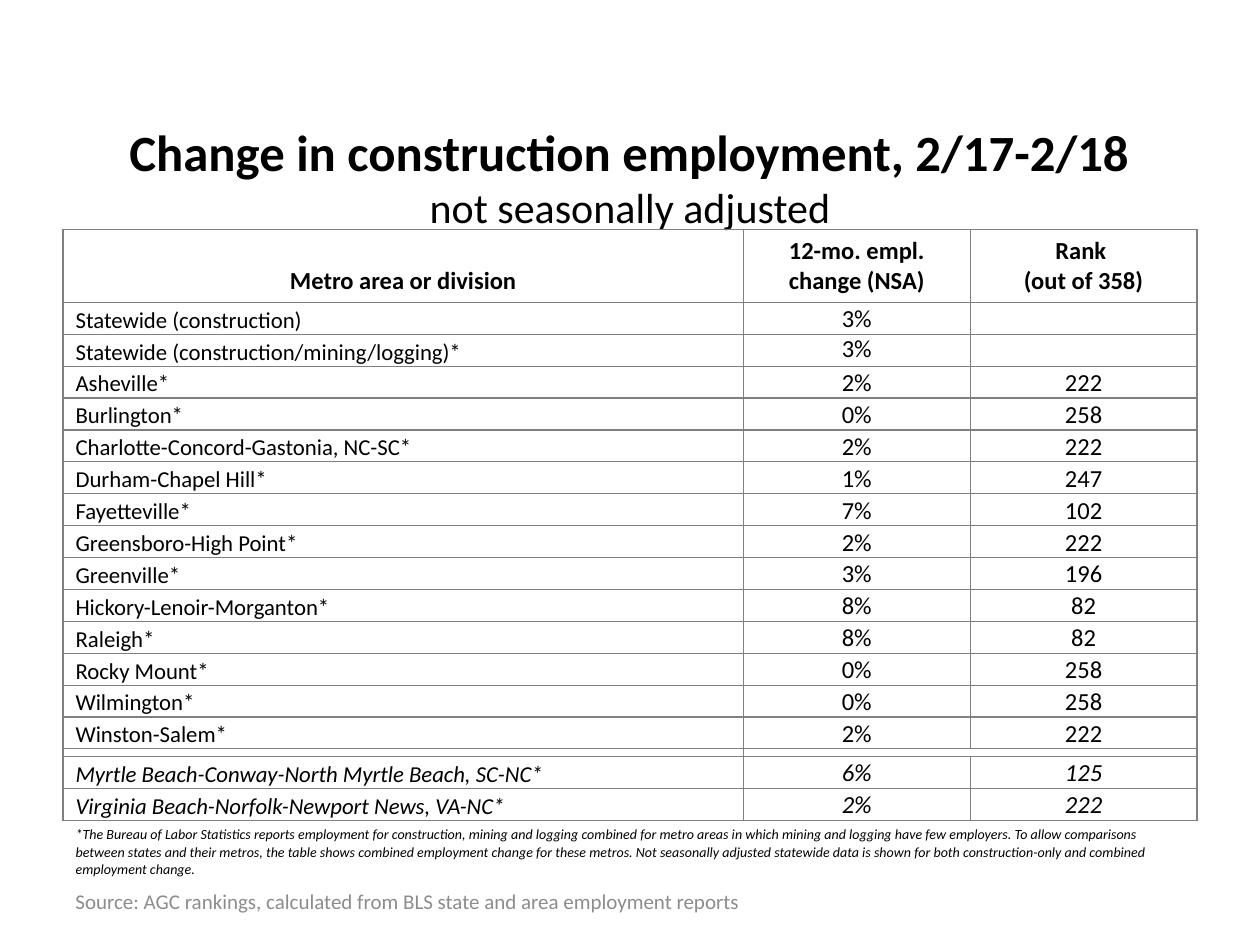
from pptx import Presentation
from pptx.dml.color import RGBColor
from pptx.enum.text import MSO_ANCHOR, MSO_AUTO_SIZE, PP_ALIGN
from pptx.oxml.ns import qn
from pptx.util import Inches, Pt
from lxml.etree import SubElement

INK = {"text": "000000", "source": "8C8C8C", "rule": "808080"}
TOP, MID, LOW = MSO_ANCHOR.TOP, MSO_ANCHOR.MIDDLE, MSO_ANCHOR.BOTTOM
HEADS = ["Metro area or division", "12-mo. empl. change (NSA)", "Rank \v(out of 358)"]
AREAS = [
    ("Statewide (construction)", "3%", ""),
    ("Statewide (construction/mining/logging)*", "3%", ""),
    ("Asheville*", "2%", "222"),
    ("Burlington*", "0%", "258"),
    ("Charlotte-Concord-Gastonia, NC-SC*", "2%", "222"),
    ("Durham-Chapel Hill*", "1%", "247"),
    ("Fayetteville*", "7%", "102"),
    ("Greensboro-High Point*", "2%", "222"),
    ("Greenville*", "3%", "196"),
    ("Hickory-Lenoir-Morganton*", "8%", "82"),
    ("Raleigh*", "8%", "82"),
    ("Rocky Mount*", "0%", "258"),
    ("Wilmington*", "0%", "258"),
    ("Winston-Salem*", "2%", "222"),
]
NEAR = [
    ("Myrtle Beach-Conway-North Myrtle Beach, SC-NC*", "6%", "125"),
    ("Virginia Beach-Norfolk-Newport News, VA-NC*", "2%", "222"),
]
NOTE = (
    "*The Bureau of Labor Statistics reports employment for construction, mining and "
    "logging combined for metro areas in which mining and logging have few employers. "
    "To allow comparisons between states and their metros, the table shows combined "
    "employment change for these metros. Not seasonally adjusted statewide data is shown "
    "for both construction-only and combined employment change."
)


class Deck:
    """Holds the style and the current slide, and places elements by shares of its size."""

    def __init__(self, wide, high):
        self.show = Presentation()
        self.show.slide_width, self.show.slide_height = Inches(wide), Inches(high)
        self.wide, self.high = self.show.slide_width, self.show.slide_height
        self.slide = self.show.slides.add_slide(self.show.slide_layouts[5])

    def box(self, x, y, w, h):
        return [int(x * self.wide), int(y * self.high), int(w * self.wide), int(h * self.high)]

    def put(self, item, form):
        for key, val in form.items():
            setattr(item, key, val)

    def style(self, run, size, ink="text", **form):
        self.put(run.font, {"name": "Calibri", "size": Pt(size), **form})
        run.font.color.rgb = RGBColor.from_string(INK[ink])

    def title(self, area, lines):
        shape = self.slide.shapes.title
        self.put(shape, dict(zip(("left", "top", "width", "height"), self.box(*area))))
        frame = shape.text_frame
        self.put(frame, {"word_wrap": True, "auto_size": MSO_AUTO_SIZE.NONE,
                         "vertical_anchor": TOP})
        para = frame.paragraphs[0]
        para.alignment = PP_ALIGN.CENTER
        for num, (text, size, bold) in enumerate(lines):
            if num:
                para.add_line_break()
            run = para.add_run()
            run.text = text
            self.style(run, size, bold=bold)

    def label(self, area, text, size, ink):
        frame = self.slide.shapes.add_textbox(*self.box(*area)).text_frame
        self.put(frame, {"word_wrap": True, "vertical_anchor": MID})
        run = frame.paragraphs[0].add_run()
        run.text = text
        self.style(run, size, ink)

    def table(self, area, cols, rows):
        grid = self.slide.shapes.add_table(len(rows), len(cols), *self.box(*area)).table
        self.put(grid, {"first_row": False, "horz_banding": False})
        for col, part in zip(grid.columns, cols):
            col.width = int(part * self.wide)
        for row, part in zip(grid.rows, rows):
            row.height = int(part * self.high)
        return grid

    def edge(self, cell, sides="LRTB"):
        props = cell._tc.get_or_add_tcPr()
        for side in "LRTB":
            line = SubElement(props, qn("a:ln" + side), w=str(Pt(0.75)))
            if side in sides:
                fill = SubElement(line, qn("a:solidFill"))
                SubElement(fill, qn("a:srgbClr"), val=INK["rule"])
            else:
                SubElement(line, qn("a:noFill"))
        cell.fill.background()

    def cell(self, cell, text, size, align, anchor, inset=None, space=None, **form):
        cell.vertical_anchor = anchor
        if inset is not None:
            self.put(cell, {"margin_left": Inches(inset), "margin_right": 0,
                            "margin_top": 0, "margin_bottom": 0})
        para = cell.text_frame.paragraphs[0]
        para.text = text
        self.put(para, {"alignment": align, "line_spacing": space})
        for run in para.runs:
            self.style(run, size, **form)
        if not text:
            para._p.get_or_add_endParaRPr().set("sz", str(size * 100))


def main():
    deck = Deck(10, 7.5)
    mid, left = PP_ALIGN.CENTER, PP_ALIGN.LEFT
    deck.title((0.05, 0.121, 0.9, 0.059), [
        ("Change in construction employment, 2/17-2/18", 29, True),
        ("not seasonally adjusted", 24, False)])
    deck.label((0.05, 0.927, 0.608, 0.053),
               "Source: AGC rankings, calculated from BLS state and area employment reports",
               12, "source")

    body = AREAS + [("", "", "")] + NEAR
    gap, last = len(AREAS) + 1, len(body) + 1
    highs = [0.077] + [0.0338] * len(body) + [0.067]
    highs[gap] = 0.008
    grid = deck.table((0.05, 0.243, 0.9, 0.684), [0.54, 0.18, 0.18], highs)
    grid.cell(gap, 1).merge(grid.cell(gap, 2))
    grid.cell(last, 0).merge(grid.cell(last, 2))
    for num in range(last + 1):
        for col in range(3):
            deck.edge(grid.cell(num, col), "T" if num == last else "LRTB")

    for col, text in enumerate(HEADS):
        deck.cell(grid.cell(0, col), text, 14, mid, LOW, bold=True)
    for num, (name, *data) in enumerate(body, 1):
        slant = num > gap
        thin = num == gap
        deck.cell(grid.cell(num, 0), name, 3 if thin else 13, left, MID, 0.1,
                  None if thin else 1.15, italic=slant)
        for col, text in enumerate(data, 1):
            deck.cell(grid.cell(num, col), text, 3 if thin else 14, mid,
                      TOP if num == 2 else LOW, 0, italic=slant)
    deck.cell(grid.cell(last, 0), NOTE, 8, left, TOP, italic=True)
    deck.show.save("out.pptx")


if __name__ == "__main__":
    main()
